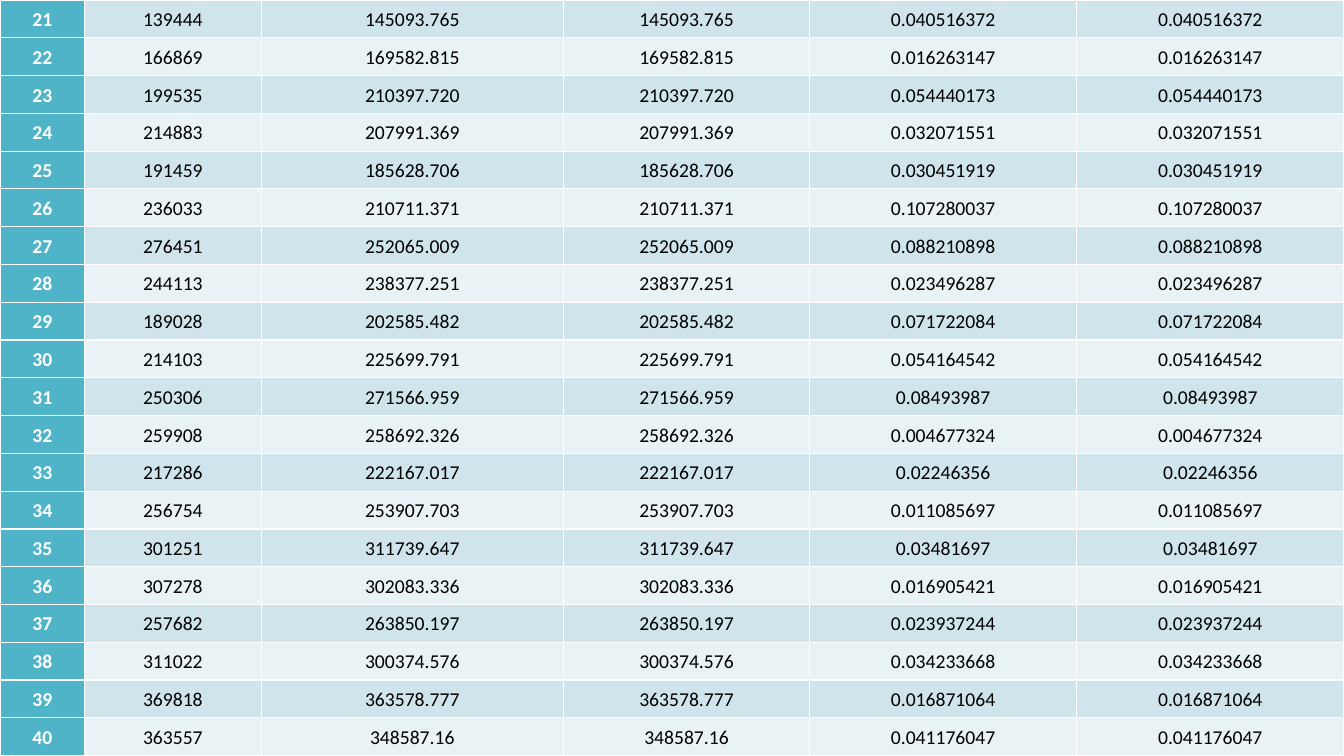
import dataclasses

import lxml.etree
import pptx
import pptx.dml.color
import pptx.enum.text
import pptx.oxml.ns
import pptx.presentation
import pptx.slide
import pptx.table
import pptx.util

COLORS = {
    "label": "50B4C8",
    "dark_band": "D0E5EB",
    "light_band": "E9F2F5",
    "white": "FFFFFF",
    "black": "000000",
}
FONT = "Calibri"
SLIDE_WIDTH = pptx.util.Inches(13.33)
SLIDE_HEIGHT = pptx.util.Inches(7.5)
COLUMN_WEIGHTS = (84, 175, 300, 244, 265, 265)
FIRST_LABEL = 21


@dataclasses.dataclass(frozen=True)
class Record:
    actual: str
    forecast: str
    error: str

    def cells(self, label: int) -> tuple[str, ...]:
        """Row texts; the forecast and the error each fill two columns."""
        return (str(label), self.actual, self.forecast, self.forecast, self.error, self.error)


RECORDS = (
    Record("139444", "145093.765", "0.040516372"),
    Record("166869", "169582.815", "0.016263147"),
    Record("199535", "210397.720", "0.054440173"),
    Record("214883", "207991.369", "0.032071551"),
    Record("191459", "185628.706", "0.030451919"),
    Record("236033", "210711.371", "0.107280037"),
    Record("276451", "252065.009", "0.088210898"),
    Record("244113", "238377.251", "0.023496287"),
    Record("189028", "202585.482", "0.071722084"),
    Record("214103", "225699.791", "0.054164542"),
    Record("250306", "271566.959", "0.08493987"),
    Record("259908", "258692.326", "0.004677324"),
    Record("217286", "222167.017", "0.02246356"),
    Record("256754", "253907.703", "0.011085697"),
    Record("301251", "311739.647", "0.03481697"),
    Record("307278", "302083.336", "0.016905421"),
    Record("257682", "263850.197", "0.023937244"),
    Record("311022", "300374.576", "0.034233668"),
    Record("369818", "363578.777", "0.016871064"),
    Record("363557", "348587.16", "0.041176047"),
)


def rgb(name: str) -> pptx.dml.color.RGBColor:
    return pptx.dml.color.RGBColor.from_string(COLORS[name])


def write_text(cell: pptx.table._Cell, text: str, *, color: str, bold: bool = False, size: float = 14) -> None:
    cell.vertical_anchor = pptx.enum.text.MSO_ANCHOR.MIDDLE
    cell.margin_left = cell.margin_right = pptx.util.Inches(0.07)
    cell.margin_top = cell.margin_bottom = 0
    para = cell.text_frame.paragraphs[0]
    para.alignment = pptx.enum.text.PP_ALIGN.CENTER
    para.line_spacing = 1.07
    span = para.add_run()
    span.text = text
    span.font.name = FONT
    span.font.size = pptx.util.Pt(size)
    span.font.bold = bold
    span.font.color.rgb = rgb(color)


def draw_borders(cell: pptx.table._Cell, color: str, width: float = 1) -> None:
    """Line all four sides; call before filling, since lines precede the fill."""
    properties = cell._tc.get_or_add_tcPr()
    for side in ("a:lnL", "a:lnR", "a:lnT", "a:lnB"):
        line = lxml.etree.SubElement(properties, pptx.oxml.ns.qn(side), w=str(pptx.util.Pt(width)))
        fill = lxml.etree.SubElement(line, pptx.oxml.ns.qn("a:solidFill"))
        lxml.etree.SubElement(fill, pptx.oxml.ns.qn("a:srgbClr"), val=COLORS[color])


def fill_cell(cell: pptx.table._Cell, color: str) -> None:
    cell.fill.solid()
    cell.fill.fore_color.rgb = rgb(color)


def add_forecast_table(page: pptx.slide.Slide) -> None:
    table = page.shapes.add_table(
        len(RECORDS), len(COLUMN_WEIGHTS), 0, 0, SLIDE_WIDTH, SLIDE_HEIGHT
    ).table
    table.first_row = table.horz_banding = False
    for column, weight in zip(table.columns, COLUMN_WEIGHTS):
        column.width = SLIDE_WIDTH * weight // sum(COLUMN_WEIGHTS)
    for row_index, record in enumerate(RECORDS):
        table.rows[row_index].height = SLIDE_HEIGHT // len(RECORDS)
        band = "light_band" if row_index % 2 else "dark_band"
        for column_index, text in enumerate(record.cells(FIRST_LABEL + row_index)):
            cell = table.cell(row_index, column_index)
            is_label = column_index == 0
            write_text(cell, text, color="white" if is_label else "black", bold=is_label)
            draw_borders(cell, "white")
            fill_cell(cell, "label" if is_label else band)


def main() -> None:
    deck = pptx.Presentation()
    deck.slide_width = SLIDE_WIDTH
    deck.slide_height = SLIDE_HEIGHT
    page = deck.slides.add_slide(deck.slide_layouts[6])
    add_forecast_table(page)
    deck.save("out.pptx")


if __name__ == "__main__":
    main()
